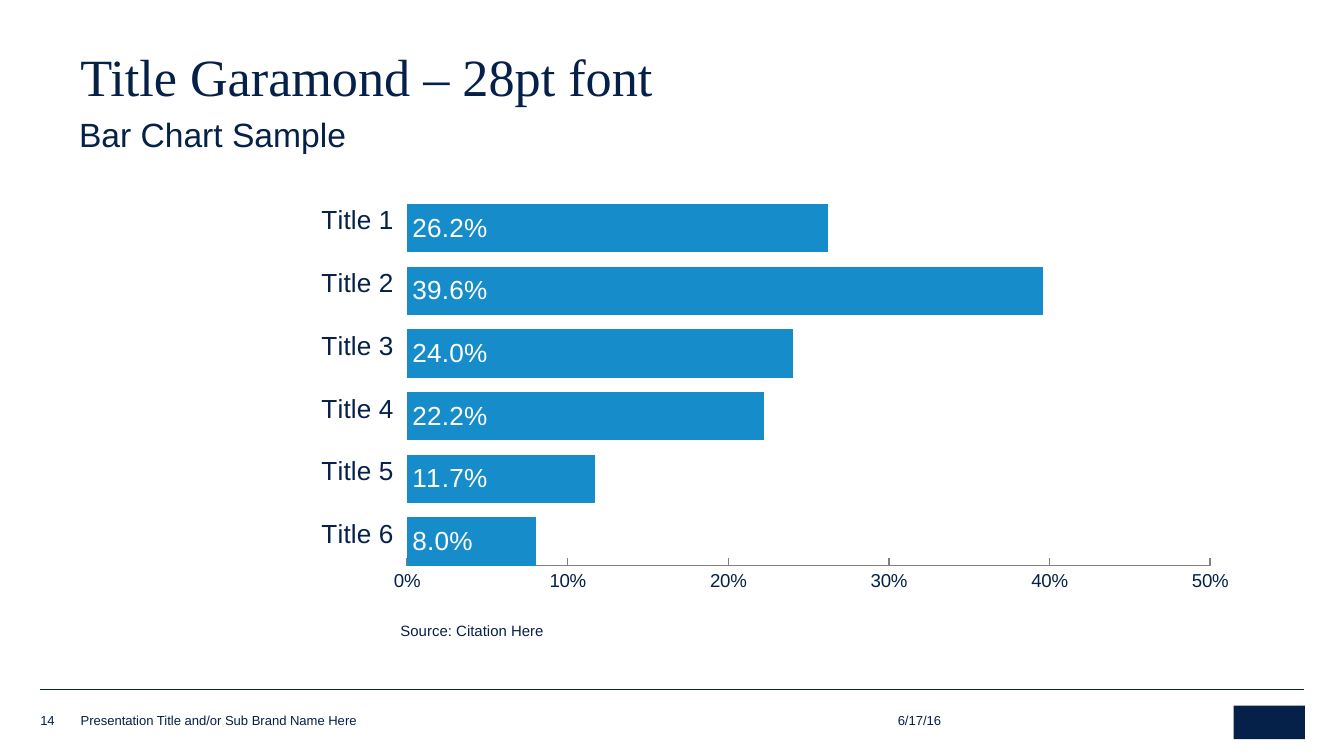
from dataclasses import dataclass
from lxml import etree
from pptx import Presentation, util as u
from pptx.chart.data import CategoryChartData
from pptx.dml.color import RGBColor
from pptx.enum import chart as ch, shapes, text as tx
from pptx.oxml.ns import qn

COLS = 1000  # grid of the slide, 100 cells to the inch
CELL = u.Inches(0.01)
WIDE = COLS * CELL
HIGH = WIDE * 9 // 16


@dataclass(frozen=True)
class Theme:
    navy: str = "052049"
    blue: str = "178CCB"
    white: str = "FFFFFF"
    gray: str = "808080"
    sans: str = "Arial"
    serif: str = "Times New Roman"
    title: int = 28
    sub: int = 18
    label: int = 14
    tick: int = 10
    note: int = 8
    foot: int = 7


@dataclass(frozen=True)
class Box:
    """A place on the grid, in columns and rows."""
    col: int
    row: int
    wide: int
    high: int

    def rect(self) -> list[int]:
        return [n * CELL for n in (self.col, self.row, self.wide, self.high)]


@dataclass(frozen=True)
class Label:
    words: str
    box: Box
    style: dict


T = Theme()
FOOT = dict(size=T.foot, anchor=tx.MSO_ANCHOR.BOTTOM)
LABELS = [
    Label("Title Garamond – 28pt font", Box(50, 35, 884, 62),
          dict(size=T.title, face=T.serif, lead=0.85, pad=(10, 5))),
    Label("Bar Chart Sample", Box(49, 83, 883, 31),
          dict(size=T.sub, lead=0.9, pad=(10, 5))),
    Label("6/17/16", Box(668, 529, 101, 13), FOOT),
    Label("Presentation Title and/or Sub Brand Name Here",
          Box(60, 531, 471, 11), FOOT),
    Label("14", Box(30, 529, 27, 13), FOOT),
    Label("Source: Citation Here", Box(298, 464, 166, 12),
          dict(size=T.note, lead=0.9)),
]
SHARES = [0.262, 0.396, 0.24, 0.222, 0.117, 0.08]  # top bar first
PLOT = dict(x=0.106, y=0.069, w=0.813, h=0.841)


def rgb(code: str) -> RGBColor:
    return RGBColor.from_string(code)


def style(font, size: int, color: str = T.navy, face: str = T.sans) -> None:
    font.size, font.name = u.Pt(size), face
    font.color.rgb = rgb(color)


def write(slide, words: str, box: Box, *, size: int, face: str = T.sans,
          lead: float = 1.0, pad: tuple[int, int] = (0, 0),
          anchor=tx.MSO_ANCHOR.TOP) -> None:
    frame = slide.shapes.add_textbox(*box.rect()).text_frame
    frame.word_wrap = True
    frame.vertical_anchor = anchor
    frame.margin_left = frame.margin_right = pad[0] * CELL
    frame.margin_top = frame.margin_bottom = pad[1] * CELL
    para = frame.paragraphs[0]
    para.line_spacing = lead
    run = para.add_run()
    run.text = words
    style(run.font, size, face=face)


def rule(slide, row: int, edge: int) -> None:
    """Draw a thin line across the slide, the same edge on both sides."""
    line = slide.shapes.add_connector(
        shapes.MSO_CONNECTOR.STRAIGHT,
        edge * CELL, row * CELL, (COLS - edge) * CELL, row * CELL)
    line.line.color.rgb = rgb(T.navy)
    line.line.width = u.Pt(0.25)
    etree.SubElement(line._element.spPr, qn("a:effectLst"))


def badge(slide, box: Box) -> None:
    mark = slide.shapes.add_shape(shapes.MSO_SHAPE.RECTANGLE, *box.rect())
    mark.shadow.inherit = False
    mark.fill.solid()
    mark.fill.fore_color.rgb = rgb(T.navy)
    mark.line.fill.background()


def place(chart, **parts: float) -> None:
    """Fix the inner plot area, in shares of the chart."""
    area = chart._chartSpace.chart.plotArea
    for old in area.findall(qn("c:layout")):
        area.remove(old)
    layout = etree.Element(qn("c:layout"))
    area.insert(0, layout)
    manual = etree.SubElement(layout, qn("c:manualLayout"))
    pairs = [("layoutTarget", "inner"), ("xMode", "edge"), ("yMode", "edge")]
    for tag, val in pairs + list(parts.items()):
        etree.SubElement(manual, qn(f"c:{tag}")).set("val", str(val))


def bars(slide, box: Box) -> None:
    data = CategoryChartData(number_format="0.0%")
    count = len(SHARES)
    data.categories = [f"Title {n}" for n in range(count, 0, -1)]
    data.add_series("Series 1", SHARES[::-1])
    data.add_series("Series 2", [None] * count)
    chart = slide.shapes.add_chart(
        ch.XL_CHART_TYPE.BAR_CLUSTERED, *box.rect(), data).chart
    chart.has_legend = chart.has_title = False
    style(chart.font, T.sub, face=T.serif)
    place(chart, **PLOT)

    plot = chart.plots[0]
    plot.vary_by_categories = False
    plot.gap_width, plot.overlap = 0, 70
    for series in plot.series:
        series.format.fill.solid()
        series.format.fill.fore_color.rgb = rgb(T.blue)

    tags = plot.series[0].data_labels
    tags.show_value = True
    tags.position = ch.XL_LABEL_POSITION.INSIDE_BASE
    tags.number_format, tags.number_format_is_linked = "0.0%", False
    style(tags.font, T.label, T.white)

    cat, val = chart.category_axis, chart.value_axis
    cat.has_major_gridlines = val.has_major_gridlines = False
    cat.major_tick_mark = ch.XL_TICK_MARK.OUTSIDE
    cat.format.line.fill.background()
    cat.tick_labels.number_format = "General"
    cat.tick_labels.number_format_is_linked = False
    style(cat.tick_labels.font, T.label)

    val.minimum_scale, val.maximum_scale, val.major_unit = 0, 0.5, 0.1
    val.major_tick_mark = ch.XL_TICK_MARK.INSIDE
    val.format.line.color.rgb = rgb(T.gray)
    val.format.line.width = u.Pt(0.75)
    ticks = val.tick_labels
    ticks.number_format, ticks.number_format_is_linked = "0%", False
    style(ticks.font, T.tick)


def main() -> None:
    deck = Presentation()
    deck.slide_width, deck.slide_height = WIDE, HIGH
    slide = deck.slides.add_slide(deck.slide_layouts[6])
    for edge in (40, 30):
        rule(slide, 513, edge)
    badge(slide, Box(918, 525, 53, 25))
    bars(slide, Box(225, 118, 735, 333))
    for item in LABELS:
        write(slide, item.words, item.box, **item.style)
    deck.save("out.pptx")


if __name__ == "__main__":
    main()
